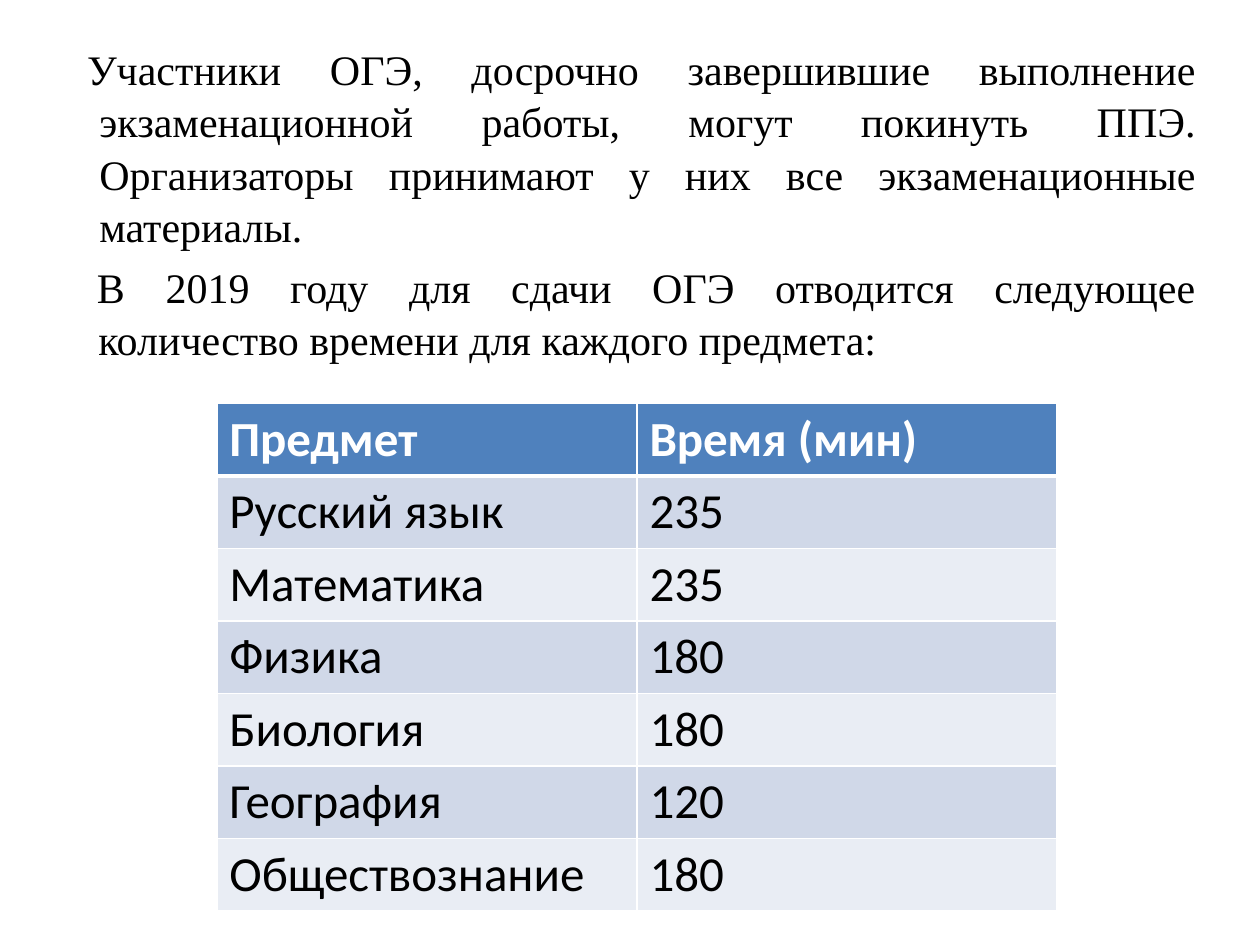
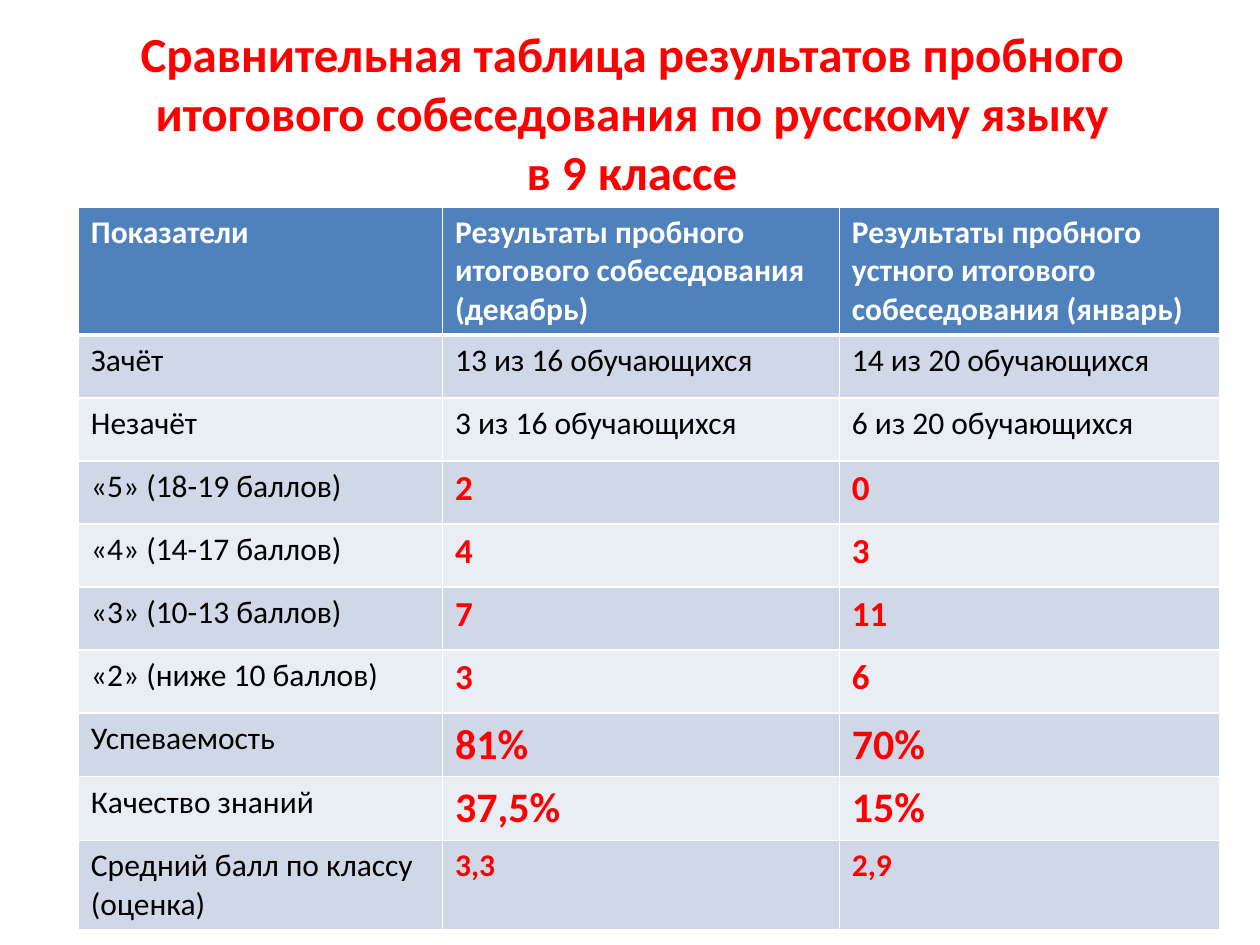
from lxml.etree import SubElement
from pptx import Presentation
from pptx.dml.color import RGBColor
from pptx.enum.text import MSO_ANCHOR, MSO_AUTO_SIZE, PP_ALIGN
from pptx.oxml.ns import qn
from pptx.util import Cm, Pt

WHITE, BLACK, RED, BLUE = "FFFFFF", "000000", "FF0000", "4F81BD"
BANDS = ["D0D8E8", "E9EDF4"]


def add_text(p, text, color, **fmt):
    p.text = text
    for r in p.runs:
        for name, value in fmt.items():
            setattr(r.font, name, value)
        r.font.color.rgb = RGBColor.from_string(color)


def add_grid(s, left, top, widths, row_height, rows, size, accents):
    tbl = s.shapes.add_table(len(rows), len(widths), left, top,
                             sum(widths), row_height * len(rows)).table
    for column, width in zip(tbl.columns, widths):
        column.width = width
    for i, row in enumerate(rows):
        tbl.rows[i].height = row_height
        for j, text in enumerate(row):
            cell = tbl.cell(i, j)
            tcPr = cell._tc.get_or_add_tcPr()
            for side in "LRTB":
                thick = (i, side) in [(0, "B"), (1, "T")]
                ln = SubElement(tcPr, qn(f"a:ln{side}"), w=str(Pt(3 if thick else 1)))
                SubElement(SubElement(ln, qn("a:solidFill")), qn("a:srgbClr"), val=WHITE)
            cell.fill.solid()
            fill = BANDS[(i - 1) % 2] if i else BLUE
            cell.fill.fore_color.rgb = RGBColor.from_string(fill)
            accent = accents.get(i) if j else None
            color = RED if accent else BLACK if i else WHITE
            add_text(cell.text_frame.paragraphs[0], text, color, name="Calibri",
                     size=Pt(accent or size), bold=i == 0 or accent is not None)


prs = Presentation()
prs.slide_width, prs.slide_height = Cm(25.4), Cm(19.05)

s = prs.slides.add_slide(prs.slide_layouts[1])
title = s.shapes.title
title.element.getparent().remove(title.element)
sp = s.placeholders[1]
box = {"left": Cm(1.5), "top": Cm(0.71), "width": Cm(22.86), "height": Cm(9.32)}
for name, value in box.items():
    setattr(sp, name, value)
tf = sp.text_frame
tf.auto_size = MSO_AUTO_SIZE.NONE
paragraphs = [
    ("Участники ОГЭ, досрочно завершившие выполнение экзаменационной работы, "
     "могут покинуть ППЭ. Организаторы принимают у них все экзаменационные "
     "материалы.", 0.25, -0.25),
    ("В 2019 году для сдачи ОГЭ отводится следующее количество времени "
     "для каждого предмета:", 0.23, -0.03),
]
for i, (text, margin, indent) in enumerate(paragraphs):
    p = tf.add_paragraph() if i else tf.paragraphs[0]
    add_text(p, text, BLACK, name="Times New Roman", size=Pt(24))
    p.alignment = PP_ALIGN.JUSTIFY
    p.line_spacing = 1.04
    pPr = p._p.get_or_add_pPr()
    pPr.set("marL", str(Cm(margin)))
    pPr.set("indent", str(Cm(indent)))
    SubElement(pPr, qn("a:buNone"))

subjects = [
    ("Предмет", "Время (мин)"),
    ("Русский язык", "235"),
    ("Математика", "235"),
    ("Физика", "180"),
    ("Биология", "180"),
    ("География", "120"),
    ("Обществознание", "180"),
]
add_grid(s, Cm(4.37), Cm(8.13), [Cm(8.47)] * 2, Cm(1.44), subjects, 28, {})

s = prs.slides.add_slide(prs.slide_layouts[5])
sp = s.shapes.title
box = {"left": Cm(1.27), "top": Cm(0.76), "width": Cm(22.94), "height": Cm(3)}
for name, value in box.items():
    setattr(sp, name, value)
tf = sp.text_frame
tf.auto_size = MSO_AUTO_SIZE.NONE
tf.vertical_anchor = MSO_ANCHOR.MIDDLE
p = tf.paragraphs[0]
add_text(p, "Сравнительная таблица результатов пробного итогового собеседования "
            "по русскому языку\vв 9 классе", RED, name="Calibri", size=Pt(28), bold=True)
p.alignment = PP_ALIGN.CENTER

results = [
    ("Показатели", "Результаты пробного итогового собеседования (декабрь)",
     "Результаты пробного устного итогового собеседования (январь)"),
    ("Зачёт", "13 из 16 обучающихся", "14 из 20 обучающихся"),
    ("Незачёт", "3 из 16 обучающихся", "6 из 20 обучающихся"),
    ("«5» (18-19 баллов)", "2", "0"),
    ("«4» (14-17 баллов)", "4", "3"),
    ("«3» (10-13 баллов)", "7", "11"),
    ("«2» (ниже 10 баллов)", "3", "6"),
    ("Успеваемость", "81%", "70%"),
    ("Качество знаний", "37,5%", "15%"),
    ("Средний балл по классу (оценка)", "3,3", "2,9"),
]
accents = {3: 20, 4: 20, 5: 20, 6: 20, 7: 24, 8: 24, 9: 18}
add_grid(s, Cm(1.58), Cm(4.17), [Cm(7.34), Cm(8), Cm(7.67)], Cm(1.27),
         results, 18, accents)

prs.save("out.pptx")
